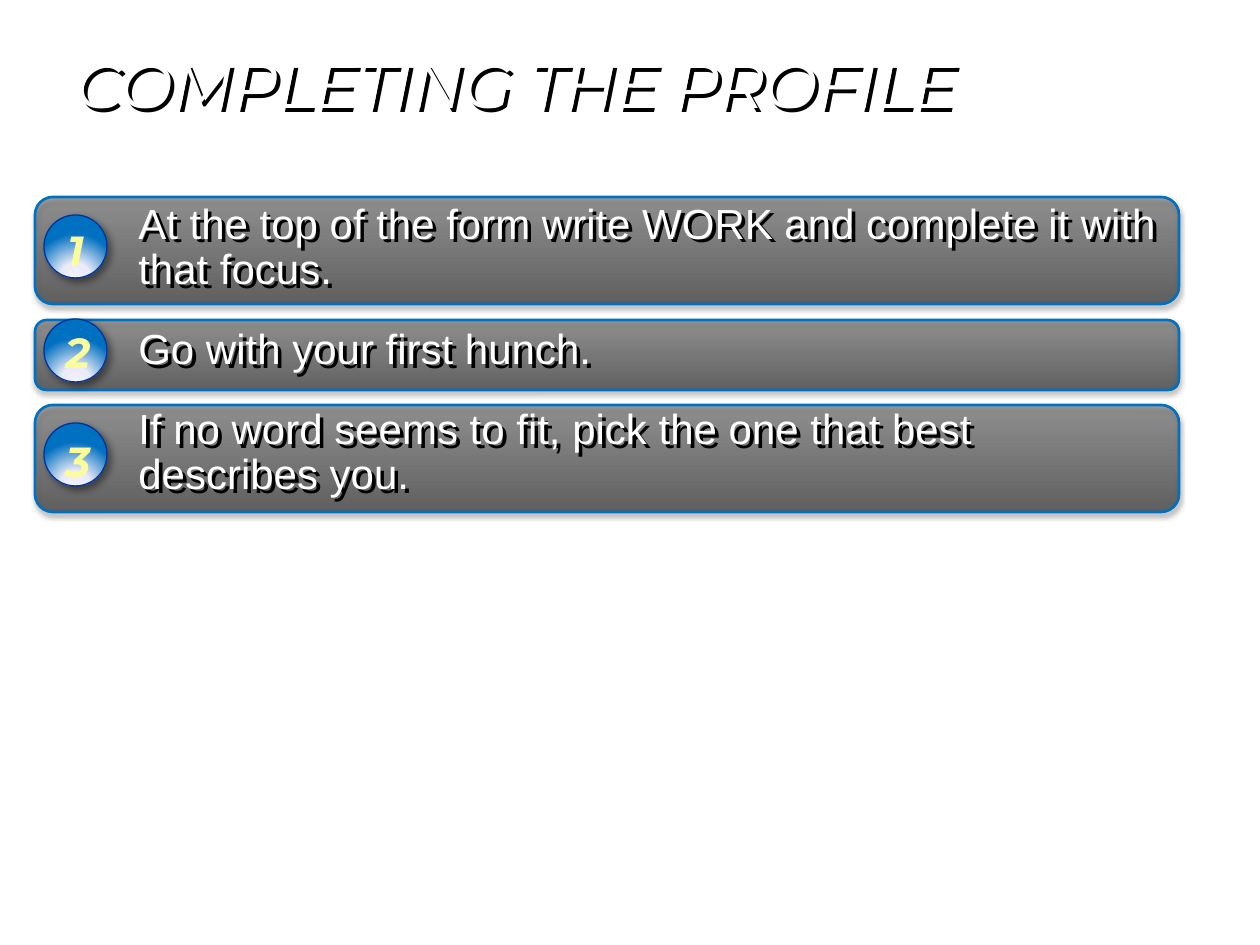
from dataclasses import dataclass

from lxml.etree import SubElement
from pptx import Presentation
from pptx.dml.color import RGBColor
from pptx.enum.shapes import MSO_SHAPE as Kind
from pptx.enum.text import MSO_ANCHOR as Anchor, PP_ALIGN as Align
from pptx.oxml.ns import qn
from pptx.util import Pt


@dataclass(frozen=True)
class Theme:
    white: str = "FFFFFF"
    black: str = "000000"
    blue: str = "0070C0"
    navy: str = "00349E"
    digit: str = "FCFC9C"
    head: str = "Montserrat"
    body: str = "Arial"
    big: int = 36
    mid: int = 24


T = Theme()
PX = 914400 / 126

TITLE = "COMPLETING THE PROFILE"
# text, bar top, bar height, digit drop below the ball's top
STEPS = [
    ("At the top of the form write WORK and complete it with that focus.", 197, 107, 4),
    ("Go with your first hunch.", 320, 70, 2),
    ("If no word seems to fit, pick the one that best\ndescribes you.", 405, 107, 7),
]
BAR_X, BAR_W = 35, 1144
BALL_X, BALL_Y, BALL, BALL_GAP = 44, 215, 63, 104
DIGIT_X, DIGIT_W = 53, 45

# position %, colour, opacity %
BAR_FILL = [(0, T.black, 54), (100, "404040", 47)]
BALL_FILL = [(0, "F0F1FB", 100), (34, "EBECF9", 100), (100, T.blue, 100)]
# opacity %, blur pt, distance pt, angle
BAR_SHADE = (35, 3.1, 1.8, 90)
BALL_SHADE = (40, 4, 3, 45)
TEXT_SHADE = (100, 0, 3, 45)


def px(*nums):
    return [round(n * PX) for n in nums]


def node(parent, tag, **attrs):
    return SubElement(parent, qn(tag), {k: str(v) for k, v in attrs.items()})


def tint(parent, color, alpha):
    clr = node(parent, "a:srgbClr", val=color)
    if alpha < 100:
        node(clr, "a:alpha", val=alpha * 1000)


def shade(shape, alpha, blur, dist, angle):
    """Cast a black shadow; from an unfilled box it falls behind the letters."""
    shape.shadow.inherit = False
    effects = shape._element.spPr.find(qn("a:effectLst"))
    out = node(effects, "a:outerShdw", blurRad=Pt(blur), dist=Pt(dist),
               dir=angle * 60000, algn="ctr", rotWithShape=0)
    tint(out, T.black, alpha)


def gradient(shape, stops, radial):
    """Fill a shape that already has a line, from its foot upwards."""
    props = shape._element.spPr
    grad = node(props, "a:gradFill", rotWithShape=1)
    stop_list = node(grad, "a:gsLst")
    for pos, color, alpha in stops:
        tint(node(stop_list, "a:gs", pos=pos * 1000), color, alpha)
    if radial:
        ray = node(grad, "a:path", **{"path": "circle"})
        node(ray, "a:fillToRect", l=50000, t=155000, r=50000, b=-55000)
    else:
        node(grad, "a:lin", ang=270 * 60000, scaled=0)
    props.find(qn("a:ln")).addprevious(grad)


def add_shape(slide, kind, box, stops, line, width, shadow, radial=False):
    shape = slide.shapes.add_shape(kind, *px(*box))
    shape.line.color.rgb = RGBColor.from_string(line)
    shape.line.width = Pt(width)
    gradient(shape, stops, radial)
    shade(shape, *shadow)


def add_text(slide, paras, box, *, font, size, color, bold=False, italic=False,
             align=Align.LEFT, top=6, indent=0, line=1.0, before=0, after=0,
             shadow=None):
    shape = slide.shapes.add_textbox(*px(*box))
    if shadow:
        shade(shape, *shadow)
    frame = shape.text_frame
    frame.word_wrap = True
    frame.vertical_anchor = Anchor.TOP
    frame.margin_top = px(top)[0]
    for i, text in enumerate(paras):
        para = frame.add_paragraph() if i else frame.paragraphs[0]
        para.text = text
        para.alignment = align
        para.line_spacing = line
        para.space_before = Pt(before if i else 0)
        para.space_after = Pt(after)
        if indent:
            para._p.get_or_add_pPr().set("marL", str(px(indent)[0]))
        for run in para.runs:
            face = run.font
            face.name, face.size = font, Pt(size)
            face.bold, face.italic = bold, italic
            face.color.rgb = RGBColor.from_string(color)


def main():
    deck = Presentation()
    deck.slide_width, deck.slide_height = px(1260, 945)
    slide = deck.slides.add_slide(deck.slide_layouts[6])

    for _, top, height, _ in STEPS:
        add_shape(slide, Kind.ROUNDED_RECTANGLE, (BAR_X, top, BAR_W, height),
                  BAR_FILL, T.blue, 1.5, BAR_SHADE)

    add_text(slide, [TITLE], (63, 38, 1134, 108), font=T.head, size=T.big,
             color=T.white, italic=True, top=8, shadow=TEXT_SHADE)
    add_text(slide, [step[0] for step in STEPS], (63, 197, 1134, 624),
             font=T.body, size=T.mid, color=T.white, indent=63, line=0.9,
             before=4.8, after=15, shadow=TEXT_SHADE)

    for i, (*_, drop) in enumerate(STEPS):
        top = BALL_Y + i * BALL_GAP
        add_shape(slide, Kind.OVAL, (BALL_X, top, BALL, BALL), BALL_FILL,
                  T.navy, 0.75, BALL_SHADE, radial=True)
        add_text(slide, [str(i + 1)], (DIGIT_X, top + drop, DIGIT_W, BALL),
                 font=T.head, size=T.mid, color=T.digit, bold=True, italic=True,
                 align=Align.CENTER)

    deck.save("out.pptx")


if __name__ == "__main__":
    main()
